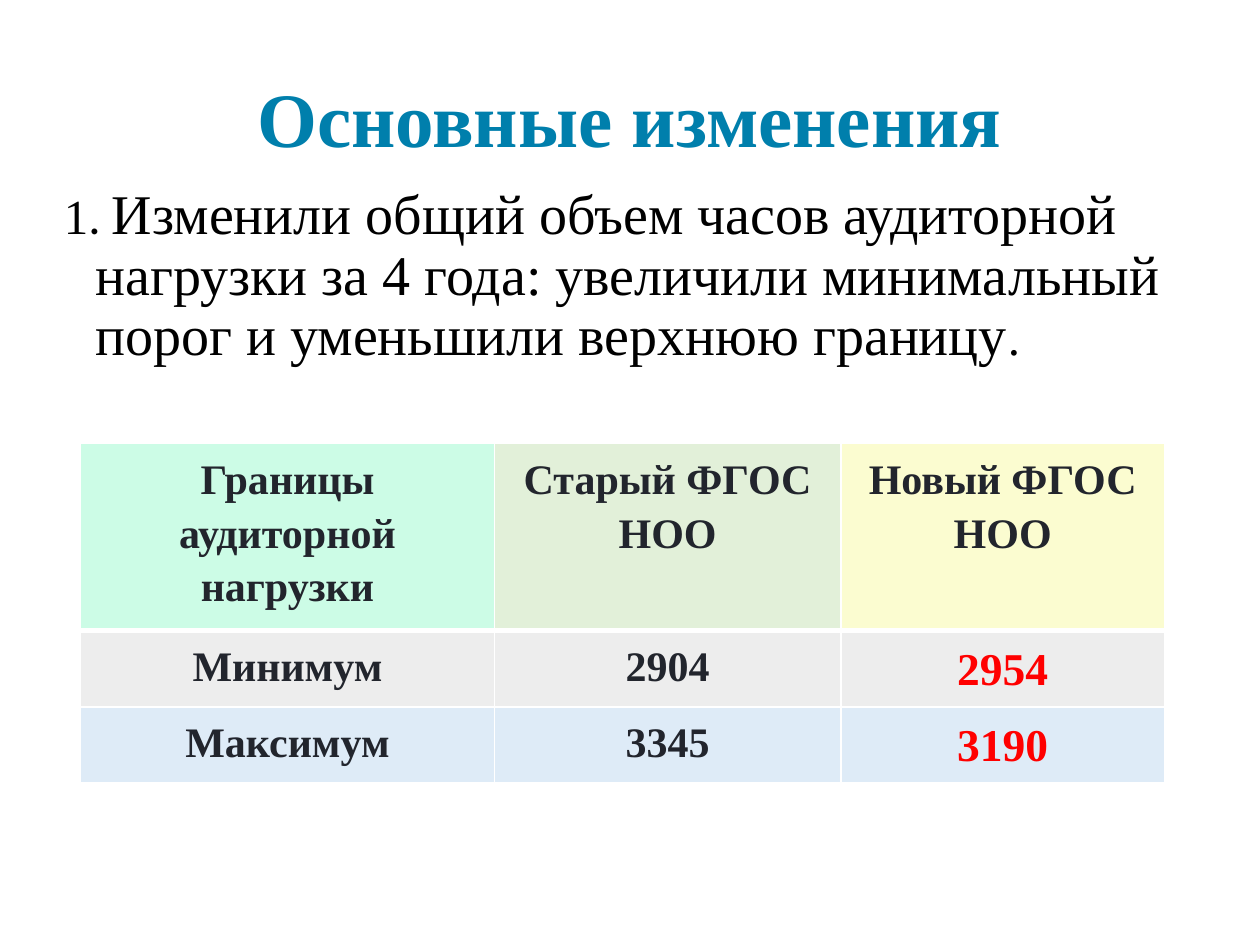
from lxml import etree
from pptx import Presentation
from pptx.dml.color import RGBColor
from pptx.enum.text import MSO_ANCHOR, PP_ALIGN
from pptx.oxml.ns import qn
from pptx.util import Pt

COLORS = {
    "title": "007FAC", "body": "000000", "cell": "22252D", "new": "FF0000",
    "mint": "CCFCE6", "green": "E2F0D9", "yellow": "FBFCD0",
    "grey": "EDEDED", "blue": "DEEBF7", "border": "FFFFFF",
}


class SlideBuilder:
    """Holds the text style and the current page."""

    font = "Times New Roman"

    def __init__(self, page):
        self.page = page

    def span(self, para, text, size, color, bold=False, font=None):
        span = para.add_run()
        span.text = text
        span.font.name = font or self.font
        span.font.size = Pt(size)
        span.font.bold = bold
        span.font.color.rgb = RGBColor.from_string(COLORS[color])

    def text_box(self, left, top, width, height, anchor=MSO_ANCHOR.TOP):
        box = self.page.shapes.add_textbox(Pt(left), Pt(top), Pt(width), Pt(height))
        frame = box.text_frame
        frame.word_wrap = True
        frame.vertical_anchor = anchor
        para = frame.paragraphs[0]
        para.line_spacing = 0.9
        return para

    def border(self, cell, side, width):
        line = etree.SubElement(cell._tc.get_or_add_tcPr(), qn(f"a:{side}"), w=str(Pt(width)))
        fill = etree.SubElement(line, qn("a:solidFill"))
        etree.SubElement(fill, qn("a:srgbClr"), val=COLORS["border"])

    def cell(self, cell, text, fill, size, color, bottom):
        # Borders come before the fill in the cell properties
        for side, width in (("lnL", 1), ("lnR", 1), ("lnT", 1), ("lnB", bottom)):
            self.border(cell, side, width)
        cell.fill.solid()
        cell.fill.fore_color.rgb = RGBColor.from_string(COLORS[fill])
        cell.margin_left = cell.margin_right = Pt(7.6)
        cell.margin_top = cell.margin_bottom = Pt(3.8)
        para = cell.text_frame.paragraphs[0]
        para.alignment = PP_ALIGN.CENTER
        para.line_spacing = 1.15
        para.space_after = Pt(10)
        self.span(para, text, size, color, bold=True)

    def table(self, left, top, widths, row_height, rows, fills):
        shape = self.page.shapes.add_table(
            len(rows), len(widths), Pt(left), Pt(top), Pt(sum(widths)), Pt(row_height * len(rows)))
        table = shape.table
        for column, width in zip(table.columns, widths):
            column.width = Pt(width)
        for r, texts in enumerate(rows):
            for c, text in enumerate(texts):
                is_new = r > 0 and c == len(texts) - 1
                size, color = (26, "new") if is_new else (24, "cell")
                self.cell(table.cell(r, c), text, fills[r][c], size, color,
                          bottom=3 if r == 0 else 1)


def main():
    deck = Presentation()
    deck.slide_width, deck.slide_height = Pt(720), Pt(540)
    builder = SlideBuilder(deck.slides.add_slide(deck.slide_layouts[6]))

    # Title
    para = builder.text_box(49.5, 28.8, 621, 82, MSO_ANCHOR.MIDDLE)
    para.alignment = PP_ALIGN.CENTER
    builder.span(para, "Основные изменения", 44, "title", bold=True)

    # Numbered statement with a hanging indent
    para = builder.text_box(29.5, 103, 659.5, 383)
    properties = para._p.get_or_add_pPr()
    properties.set("marL", str(Pt(18)))
    properties.set("indent", str(Pt(-18)))
    builder.span(para, "1", 28, "body")
    builder.span(para, ". ", 28, "body", font="Calibri")
    builder.span(para, "Изменили общий объем часов аудиторной нагрузки за 4 года: "
                 "увеличили минимальный порог и уменьшили верхнюю границу", 32, "body")
    builder.span(para, ".", 28, "body")

    # Comparison of the limits
    builder.table(
        46, 253.5, (236.5, 198, 185), 29.5,
        rows=[("Границы аудиторной нагрузки", "Старый ФГОС НОО", "Новый ФГОС НОО"),
              ("Минимум", "2904", "2954"),
              ("Максимум", "3345", "3190")],
        fills=[("mint", "green", "yellow"), ("grey",) * 3, ("blue",) * 3])

    deck.save("out.pptx")


if __name__ == "__main__":
    main()
